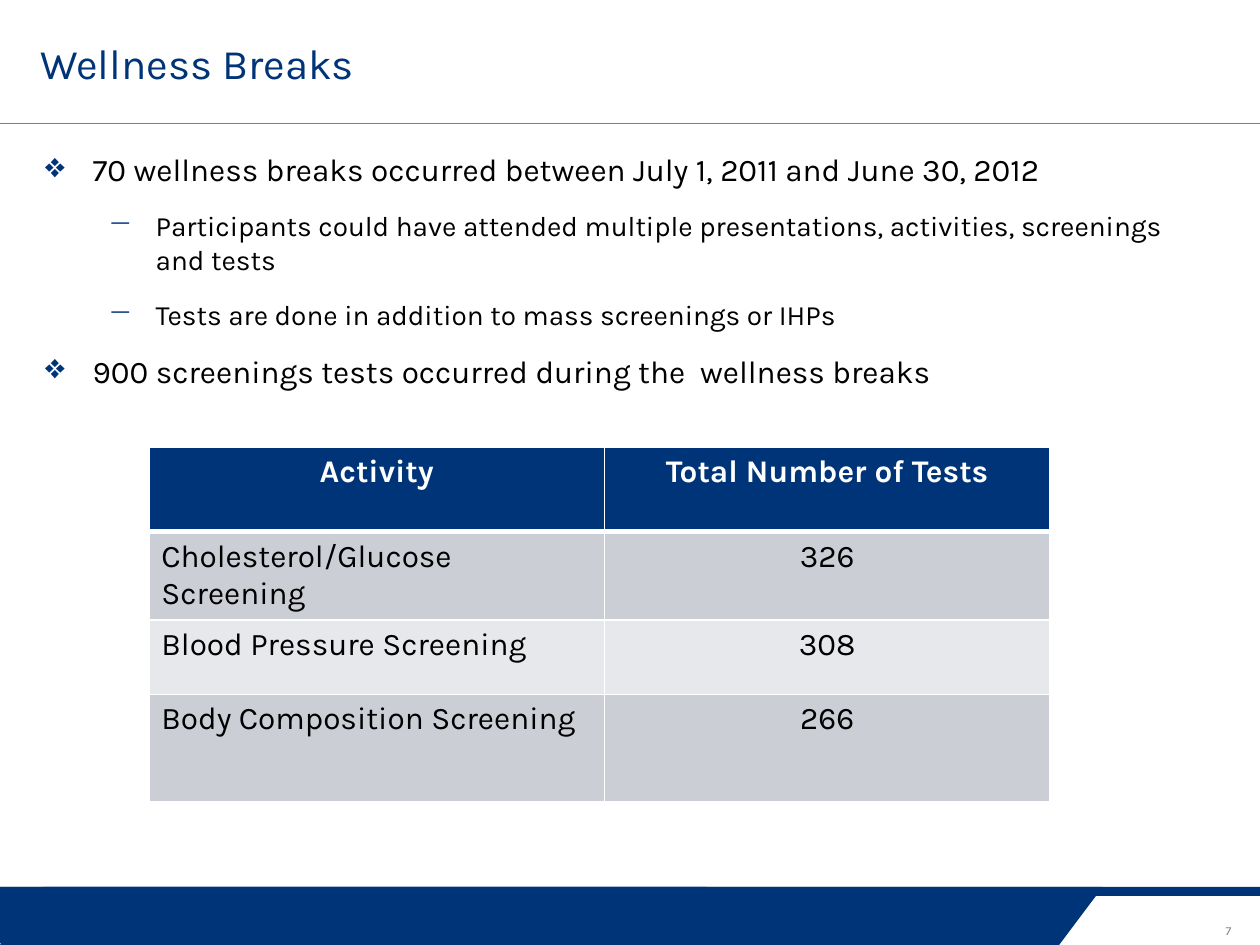
import pptx
import pptx.dml.color
import pptx.enum.shapes
import pptx.enum.text
import pptx.oxml
import pptx.oxml.ns
import pptx.util
from pptx.util import Cm

NAVY = pptx.dml.color.RGBColor(0x00, 0x34, 0x78)
BLACK = pptx.dml.color.RGBColor(0x00, 0x00, 0x00)
WHITE = pptx.dml.color.RGBColor(0xFF, 0xFF, 0xFF)
GREY = pptx.dml.color.RGBColor(0x80, 0x80, 0x80)
TAUPE = pptx.dml.color.RGBColor(0x8D, 0x81, 0x7B)
DARK = pptx.dml.color.RGBColor(0xCC, 0xCE, 0xD6)
LIGHT = pptx.dml.color.RGBColor(0xE7, 0xE8, 0xEC)

FONT = "Karla"
LEFT = pptx.enum.text.PP_ALIGN.LEFT
MID = pptx.enum.text.PP_ALIGN.CENTER
SHAPES = pptx.enum.shapes.MSO_SHAPE
NS = pptx.oxml.ns.nsdecls("a")

# Bullet sign, indent in cm and text size for each level
LEVELS = [("❖", 0.96, 18), ("−", 2.23, 16)]
POINTS = [
    (0, "70 wellness breaks occurred between July 1, 2011 and June 30, 2012"),
    (1, "Participants could have attended multiple presentations, "
        "activities, screenings and tests"),
    (1, "Tests are done in addition to mass screenings or IHPs"),
    (0, "900 screenings tests occurred during the  wellness breaks"),
]
ROWS = [
    ("Activity", "Total Number of Tests"),
    ("Cholesterol/Glucose Screening", "326"),
    ("Blood Pressure Screening", "308"),
    ("Body Composition Screening", "266"),
]
WIDTHS = [9.19, 8.97]
HEIGHTS = [1.7, 1.55, 1.5, 2.16]


def style(para, size, color, bold=False):
    for run in para.runs:
        run.font.name = FONT
        run.font.size = pptx.util.Pt(size)
        run.font.color.rgb = color
        run.font.bold = bold


def add_text(slide, box, text, size, color):
    frame = slide.shapes.add_textbox(*map(Cm, box)).text_frame
    frame.word_wrap = True
    frame.text = text
    style(frame.paragraphs[0], size, color)
    return frame


def add_band(slide, kind, box):
    band = slide.shapes.add_shape(kind, *map(Cm, box))
    band.shadow.inherit = False
    band.fill.solid()
    band.fill.fore_color.rgb = NAVY
    band.line.fill.background()
    return band


def add_rule(slide, top):
    """Draw a thin line across the whole slide."""
    rule = slide.shapes.add_connector(
        pptx.enum.shapes.MSO_CONNECTOR.STRAIGHT, 0, Cm(top), Cm(25.4), Cm(top))
    rule.line.color.rgb = GREY
    rule.line.width = pptx.util.Pt(0.75)
    rule._element.spPr.append(pptx.oxml.parse_xml(f"<a:effectLst {NS}/>"))


def set_bullet(para, sign, indent):
    props = para._p.get_or_add_pPr()
    props.set("marL", str(Cm(indent)))
    props.set("indent", str(-Cm(0.96)))
    for xml in (
        f'<a:buClr {NS}><a:srgbClr val="{NAVY}"/></a:buClr>',
        f'<a:buSzPct {NS} val="110000"/>',
        f'<a:buChar {NS} char="{sign}"/>',
    ):
        props.append(pptx.oxml.parse_xml(xml))


def add_points(slide, box):
    frame = add_text(slide, box, "\n".join(text for _, text in POINTS),
                     18, BLACK)
    for i, (para, (level, _)) in enumerate(zip(frame.paragraphs, POINTS)):
        sign, indent, size = LEVELS[level]
        set_bullet(para, sign, indent)
        para.level = level
        para.space_before = pptx.util.Pt(6 if i else 0)
        para.space_after = pptx.util.Pt(6)
        style(para, size, BLACK)


def set_edges(cell, top, base):
    """Give a cell white edges; top and base are widths in points."""
    props = cell._tc.get_or_add_tcPr()
    for side, width in zip("LRTB", (1, 1, top, base)):
        props.append(pptx.oxml.parse_xml(
            f'<a:ln{side} {NS} w="{pptx.util.Pt(width)}"><a:solidFill>'
            f'<a:srgbClr val="{WHITE}"/></a:solidFill></a:ln{side}>'))


def add_grid(slide, left, top):
    table = slide.shapes.add_table(
        len(ROWS), len(WIDTHS), Cm(left), Cm(top),
        Cm(sum(WIDTHS)), Cm(sum(HEIGHTS))).table
    for col, width in zip(table.columns, WIDTHS):
        col.width = Cm(width)
    for r, texts in enumerate(ROWS):
        table.rows[r].height = Cm(HEIGHTS[r])
        head = r == 0
        for c, text in enumerate(texts):
            cell = table.cell(r, c)
            set_edges(cell, 3 if r == 1 else 1, 3 if head else 1)
            cell.fill.solid()
            cell.fill.fore_color.rgb = NAVY if head else (LIGHT, DARK)[r % 2]
            cell.text_frame.text = text
            para = cell.text_frame.paragraphs[0]
            para.alignment = MID if head or c else LEFT
            style(para, 18, WHITE if head else BLACK, head)


def add_footer(slide):
    add_band(slide, SHAPES.RECTANGLE, (0, 17.88, 25.4, 0.18))
    slant = add_band(slide, SHAPES.PARALLELOGRAM, (0, 17.88, 22.23, 1.17))
    slant.adjustments[0] = 0.75
    add_band(slide, SHAPES.RECTANGLE, (0, 17.88, 14.25, 1.14))
    frame = add_text(slide, (24.46, 18.49, 0.89, 0.56), "7", 7, TAUPE)
    frame.margin_right = Cm(0.53)
    frame.paragraphs[0].alignment = MID


def main():
    deck = pptx.Presentation()
    deck.slide_width, deck.slide_height = Cm(25.4), Cm(19.05)
    slide = deck.slides.add_slide(deck.slide_layouts[6])
    add_rule(slide, 2.49)
    add_footer(slide)
    add_text(slide, (0.56, 0.64, 23.34, 1.04), "Wellness Breaks", 24, NAVY)
    add_points(slide, (0.66, 2.9, 23.85, 1.17))
    add_grid(slide, 3, 9.02)
    deck.save("out.pptx")


if __name__ == "__main__":
    main()
